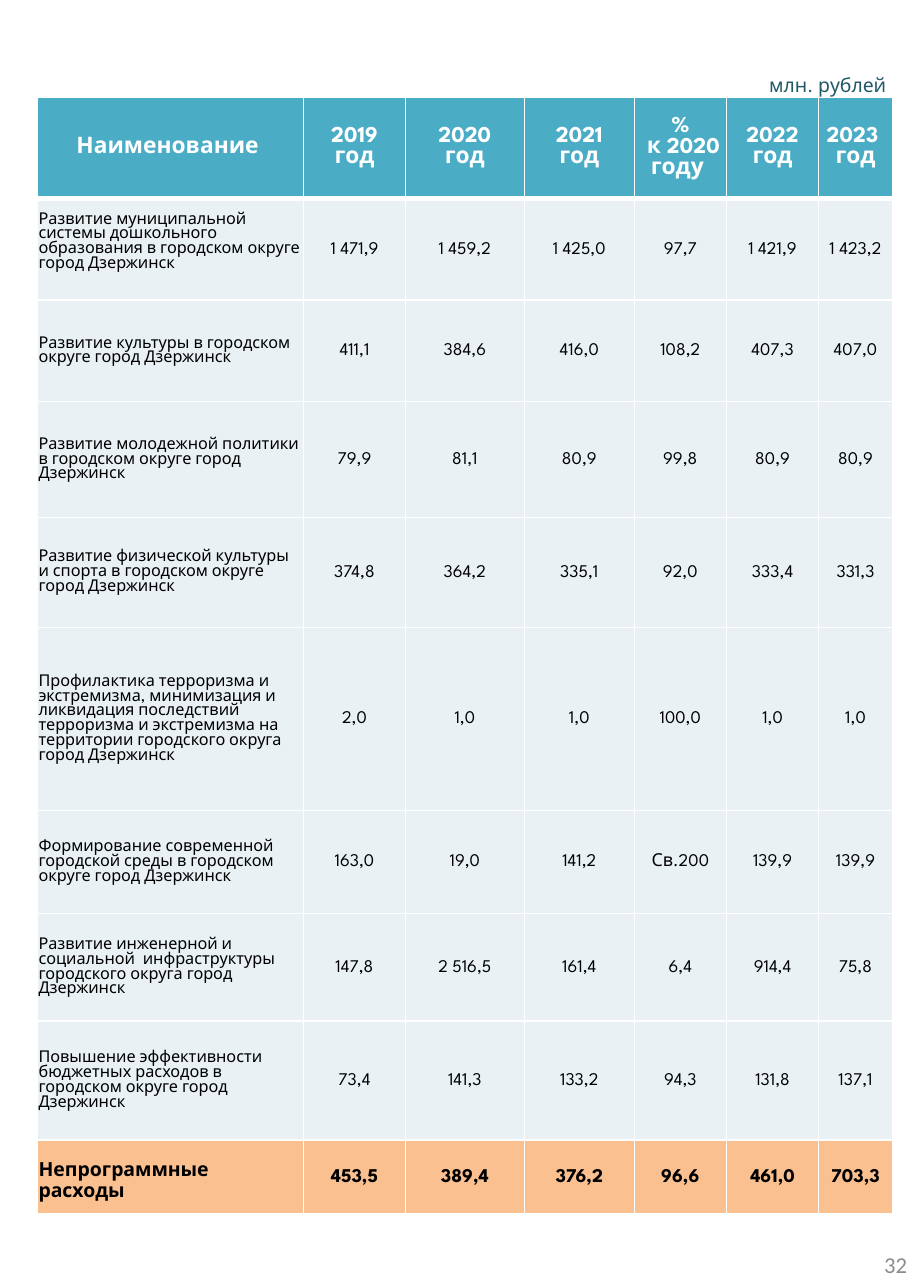
from dataclasses import dataclass

from lxml.etree import SubElement as Sub
from pptx import Presentation
from pptx.dml.color import RGBColor as Rgb
from pptx.enum.text import MSO_ANCHOR as Anchor, PP_ALIGN as Align
from pptx.oxml.ns import qn
from pptx.util import Inches as In, Pt

WIDE, HIGH = Pt(567), Pt(793.75)
COLS = (2.28, 0.87, 1.02, 0.94, 0.79, 0.79, 0.63)
ROWS = (0.87, 0.87, 0.87, 0.99, 0.94, 1.57, 0.88, 0.92, 1.02, 0.63)


@dataclass(frozen=True)
class Theme:
    font: str = "League Spartan"
    plain: str = "Calibri"
    white: str = "FFFFFF"
    black: str = "000000"
    head: str = "4BACC6"
    body: str = "E9F1F5"
    total: str = "FAC090"
    unit: str = "215968"
    page: str = "8C8C8C"
    big: int = 14
    mid: int = 12
    value: int = 11
    name: int = 10
    gap: int = 20
    thin: int = 1
    thick: int = 3


THEME = Theme()

HEADS = ("Наименование ", "2019\nгод", " 2020 \nгод", " 2021 \nгод",
         "%\n к 2020 году ", "2022\nгод", "2023 \nгод")
ITEMS = (
    ("Развитие муниципальной системы дошкольного образования "
     "в городском округе город Дзержинск",
     "1 471,9", "1 459,2", "1 425,0", "97,7", "1 421,9", "1 423,2"),
    ("Развитие культуры в городском округе город Дзержинск",
     "411,1", "384,6", "416,0", "108,2", "407,3", "407,0"),
    ("Развитие молодежной политики в городском округе город Дзержинск",
     "79,9", "81,1", "80,9", "99,8", "80,9", "80,9"),
    ("Развитие физической культуры и спорта в городском округе город Дзержинск",
     "374,8", "364,2", "335,1", "92,0", "333,4", "331,3"),
    ("Профилактика терроризма и экстремизма, минимизация и ликвидация "
     "последствий терроризма и экстремизма на территории городского округа "
     "город Дзержинск",
     "2,0", "1,0", "1,0", "100,0", "1,0", "1,0"),
    ("Формирование современной городской среды в городском округе город Дзержинск",
     "163,0", "19,0", "141,2", "Св.200", "139,9", "139,9"),
    ("Развитие инженерной и социальной  инфраструктуры городского округа "
     "город Дзержинск",
     "147,8", "2 516,5", "161,4", "6,4", "914,4", "75,8"),
    ("Повышение эффективности бюджетных расходов в городском округе "
     "город Дзержинск",
     "73,4", "141,3", "133,2", "94,3", "131,8", "137,1"),
)
TOTAL = ("Непрограммные расходы",
         "453,5", "389,4", "376,2", "96,6", "461,0", "703,3")


def write(frame, text, size, color=THEME.black, bold=False,
          align=Align.LEFT, font=THEME.font, gap=None):
    """Fill a frame, one paragraph a line; gap is the size of the first space."""
    for num, line in enumerate(text.split("\n")):
        para = frame.add_paragraph() if num else frame.paragraphs[0]
        para.alignment = align
        for part in line.partition(" ") if gap else (line,):
            run = para.add_run()
            run.text = part
            run.font.name = font
            run.font.size = Pt(gap if part == " " else size)
            run.font.bold = bold
            run.font.color.rgb = Rgb.from_string(color)


def label(slide, text, left, top, width, height, inset=0, **style):
    """Add a text box placed by shares of the slide's size."""
    box = slide.shapes.add_textbox(round(WIDE * left), round(HIGH * top),
                                   round(WIDE * width), round(HIGH * height))
    frame = box.text_frame
    frame.word_wrap = True
    frame.vertical_anchor = Anchor.MIDDLE
    frame.margin_left = frame.margin_right = In(inset)
    frame.margin_top = frame.margin_bottom = 0
    write(frame, text, **style)


def border(cell, **widths):
    """Draw white cell sides; the keys are L, R, T and B."""
    props = cell._tc.get_or_add_tcPr()
    for side, width in widths.items():
        line = Sub(props, qn(f"a:ln{side}"), w=str(Pt(width)))
        fill = Sub(line, qn("a:solidFill"))
        Sub(fill, qn("a:srgbClr"), val=THEME.white)


def fill_row(table, row, texts, back, inset=0.01, top=THEME.thin,
             base=THEME.thin, first=None, **style):
    """Fill one table row; first overrides the style of its first cell."""
    for col, text in enumerate(texts):
        cell = table.cell(row, col)
        cell.vertical_anchor = Anchor.MIDDLE
        cell.margin_left = cell.margin_right = cell.margin_top = In(inset)
        cell.margin_bottom = 0
        border(cell, L=THEME.thin, R=THEME.thin, T=top, B=base)
        cell.fill.solid()
        cell.fill.fore_color.rgb = Rgb.from_string(back)
        look = {"align": Align.CENTER, **style}
        if col == 0:
            look.update(first or {})
        write(cell.text_frame, text, **look)


def budget(slide):
    frame = slide.shapes.add_table(len(ROWS), len(COLS), In(0.32), In(0.83),
                                   In(sum(COLS)), In(sum(ROWS)))
    table = frame.table
    table.horz_banding = False
    for col, width in zip(table.columns, COLS):
        col.width = In(width)
    for row, height in zip(table.rows, ROWS):
        row.height = In(height)
    fill_row(table, 0, HEADS, THEME.head, inset=0, base=THEME.thick,
             size=THEME.big, color=THEME.white, bold=True)
    for row, item in enumerate(ITEMS, 1):
        fill_row(table, row, item, THEME.body, size=THEME.value,
                 top=THEME.thick if row == 1 else THEME.thin,
                 first={"size": THEME.name, "align": Align.LEFT})
    table.cell(1, 0).margin_bottom = In(0.13)
    fill_row(table, len(ROWS) - 1, TOTAL, THEME.total, size=THEME.mid,
             bold=True, first={"align": Align.LEFT, "gap": THEME.gap})


def main():
    deck = Presentation()
    deck.slide_width, deck.slide_height = WIDE, HIGH
    slide = deck.slides.add_slide(deck.slide_layouts[6])
    budget(slide)
    label(slide, "млн. рублей", 0.836, 0.057, 0.16, 0.018,
          size=THEME.mid, color=THEME.unit)
    label(slide, "32", 0.77, 0.963, 0.23, 0.037, inset=0.11, size=THEME.big,
          color=THEME.page, align=Align.RIGHT, font=THEME.plain)
    deck.save("out.pptx")


if __name__ == "__main__":
    main()
